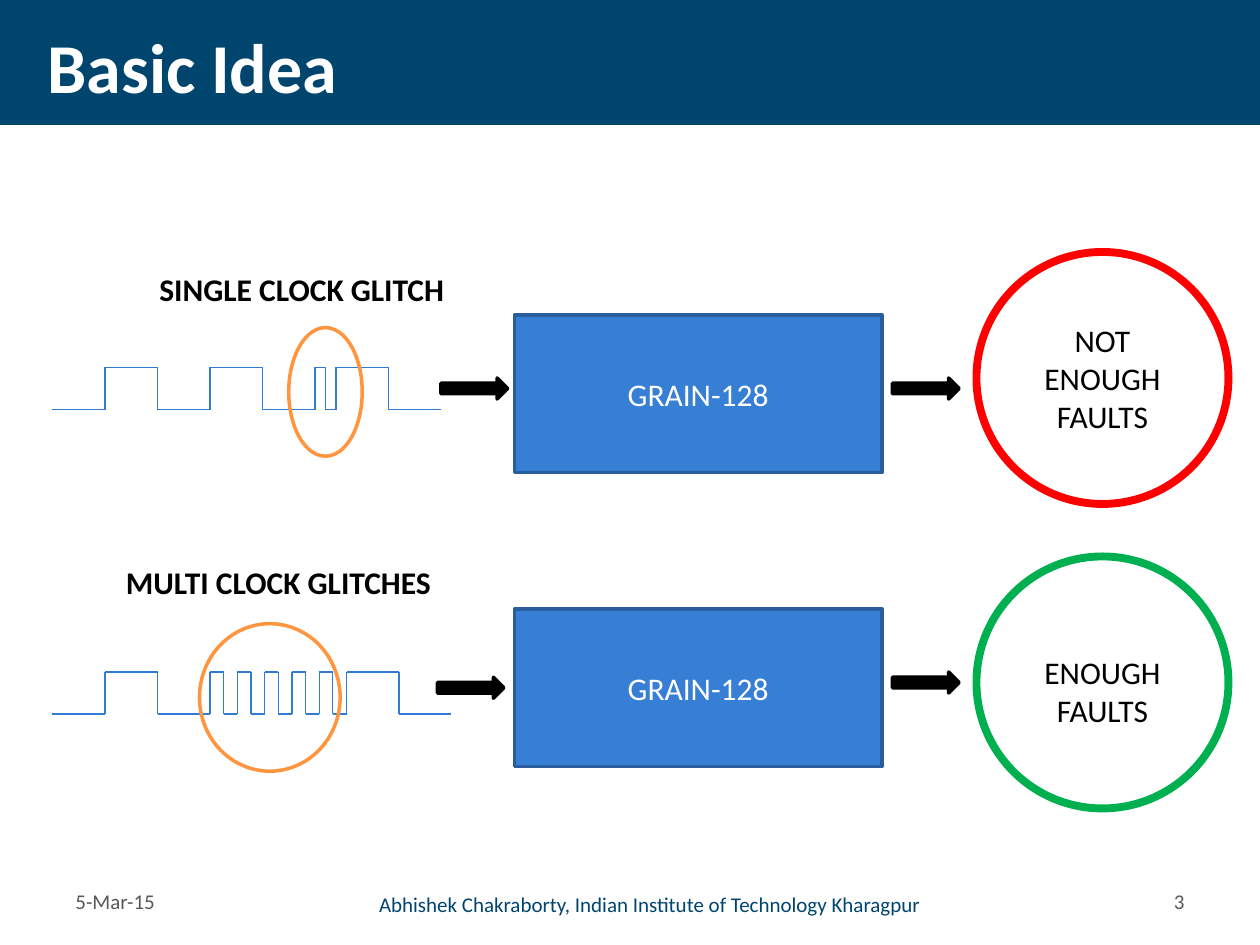
import dataclasses
import typing

import pptx
import pptx.dml.color
import pptx.enum.shapes
import pptx.enum.text
import pptx.oxml.ns
import pptx.util
from lxml import etree

WIDTH, HEIGHT = 10, 7.5
COLUMNS, ROWS = 24, 18
NAVY, GRAY, BLACK, WHITE = "00456E", "595959", "000000", "FFFFFF"
BLUE, DARK_BLUE, SIGNAL, ORANGE = "377ED5", "295D9E", "327BD4", "FF963F"
Shapes = pptx.enum.shapes.MSO_SHAPE
Align = pptx.enum.text.PP_ALIGN
Anchor = pptx.enum.text.MSO_ANCHOR


@dataclasses.dataclass(frozen=True)
class Box:
    column: float
    row: float
    columns: float
    rows: float

    def lengths(self) -> tuple:
        return (across(self.column), down(self.row),
                across(self.columns), down(self.rows))


@dataclasses.dataclass(frozen=True)
class Scenario:
    caption: str
    caption_box: Box
    edges: tuple
    signal_end: float
    signal_top: float
    glitch: Box
    cipher_row: float
    input_arrow: tuple
    output_row: float
    circle_row: float
    circle_color: str
    outcome: str
    outcome_box: Box


SCENARIOS = (
    Scenario("SINGLE CLOCK GLITCH", Box(2.8, 5.02, 6.1, 0.96),
             (2, 3, 4, 5, 6, 6.2, 6.4, 7.4), 8.4, 7,
             Box(5.5, 6.24, 1.4, 2.45), 6, (8.4, 7.2), 7.2, 4.8, "FF0000",
             "NOT\nENOUGH\nFAULTS", Box(19, 6, 4, 2.42)),
    Scenario("MULTI CLOCK GLITCHES", Box(2.16, 10.6, 6.43, 0.96),
             (2, 3, *(4 + 0.26 * step for step in range(11)), 7.6), 8.6, 12.8,
             Box(3.8, 11.88, 2.68, 2.81), 11.6, (8.33, 12.9), 12.8, 10.6, "00B050",
             "ENOUGH\nFAULTS", Box(19, 12.32, 4, 1.7)),
)


def across(columns: float) -> int:
    return pptx.util.Inches(columns * WIDTH / COLUMNS)


def down(rows: float) -> int:
    return pptx.util.Inches(rows * HEIGHT / ROWS)


def color(value: str) -> pptx.dml.color.RGBColor:
    return pptx.dml.color.RGBColor.from_string(value)


def write(shape, text: str, *, size: float = 18, ink: str = BLACK, bold: bool = False,
          align=Align.LEFT, anchor=Anchor.TOP, wrap: bool = True) -> None:
    frame = shape.text_frame
    frame.text = text
    frame.word_wrap = wrap
    frame.vertical_anchor = anchor
    for paragraph in frame.paragraphs:
        paragraph.alignment = align
        font = paragraph.font
        font.name, font.size, font.bold = "Calibri", pptx.util.Pt(size), bold
        for run in paragraph.runs:
            run.font.name, run.font.size = "Calibri", pptx.util.Pt(size)
            run.font.bold = bold
            run.font.color.rgb = color(ink)


def add_text(slide, box: Box, text: str, **text_format: typing.Any) -> None:
    write(slide.shapes.add_textbox(*box.lengths()), text, **text_format)


def add_figure(slide, kind, box: Box, fill: typing.Optional[str] = None,
               line: typing.Optional[str] = None, weight: float = 2):
    shape = slide.shapes.add_shape(kind, *box.lengths())
    shape.shadow.inherit = False
    if fill:
        shape.fill.solid()
        shape.fill.fore_color.rgb = color(fill)
    else:
        shape.fill.background()
    if line:
        shape.line.color.rgb = color(line)
        shape.line.width = pptx.util.Pt(weight)
    else:
        shape.line.fill.background()
    return shape


def add_arrow(slide, column: float, row: float) -> None:
    add_figure(slide, Shapes.RIGHT_ARROW, Box(column, row, 1.27, 0.4), BLACK, BLACK)


def add_signal(slide, edges: tuple, end: float, top: float) -> None:
    low, high = top + 0.8, top
    points, level = [(1, low)], low
    for edge in edges:
        points.append((edge, level))
        level = high if level == low else low
        points.append((edge, level))
    points.append((end, level))
    for start, finish in zip(points, points[1:]):
        connector = slide.shapes.add_connector(
            pptx.enum.shapes.MSO_CONNECTOR.STRAIGHT,
            across(start[0]), down(start[1]), across(finish[0]), down(finish[1]))
        connector.line.color.rgb = color(SIGNAL)
        connector.line.width = pptx.util.Pt(0.75)
        etree.SubElement(connector._element.spPr, pptx.oxml.ns.qn("a:effectLst"))


def add_scenario(slide, scenario: Scenario) -> None:
    cipher = add_figure(slide, Shapes.RECTANGLE, Box(9.8, scenario.cipher_row, 7, 3),
                        BLUE, DARK_BLUE)
    write(cipher, "GRAIN-128", ink=WHITE, align=Align.CENTER, anchor=Anchor.MIDDLE)
    add_arrow(slide, *scenario.input_arrow)
    add_arrow(slide, 17, scenario.output_row)
    add_signal(slide, scenario.edges, scenario.signal_end, scenario.signal_top)
    add_figure(slide, Shapes.OVAL, scenario.glitch, line=ORANGE)
    add_text(slide, scenario.caption_box, scenario.caption, bold=True)
    add_figure(slide, Shapes.OVAL, Box(18.6, scenario.circle_row, 4.8, 4.8),
               WHITE, scenario.circle_color, 4.5)
    add_text(slide, scenario.outcome_box, scenario.outcome, align=Align.CENTER)


def main() -> None:
    presentation = pptx.Presentation()
    presentation.slide_width = pptx.util.Inches(WIDTH)
    presentation.slide_height = pptx.util.Inches(HEIGHT)
    slide = presentation.slides.add_slide(presentation.slide_layouts[6])

    add_figure(slide, Shapes.RECTANGLE, Box(0, 0, COLUMNS, 2.38), NAVY)
    add_text(slide, Box(0.67, 0.24, 22.68, 2.02), "Basic Idea", size=40, ink=WHITE,
             bold=True, anchor=Anchor.MIDDLE, wrap=False)
    for scenario in SCENARIOS:
        add_scenario(slide, scenario)

    footer = {"size": 12, "anchor": Anchor.MIDDLE}
    add_text(slide, Box(1.2, 16.68, 2.86, 0.96), "5-Mar-15", ink=GRAY, **footer)
    add_text(slide, Box(4.82, 16.75, 15.12, 0.96),
             "Abhishek Chakraborty, Indian Institute of Technology Kharagpur",
             ink=NAVY, align=Align.CENTER, **footer)
    add_text(slide, Box(19.94, 16.68, 2.86, 0.96), "3", ink=GRAY,
             align=Align.RIGHT, **footer)
    presentation.save("out.pptx")


if __name__ == "__main__":
    main()
